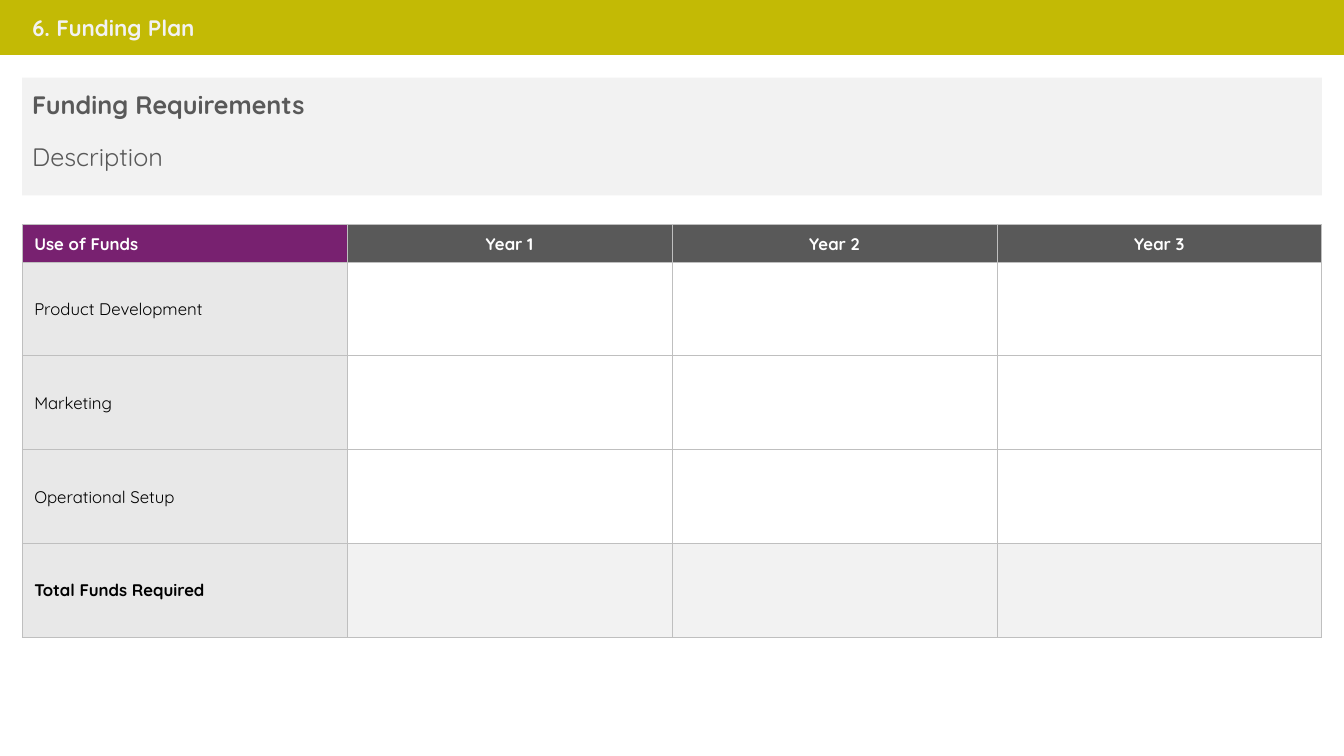
from lxml import etree
from pptx import Presentation
from pptx import util as u
from pptx.dml.color import RGBColor
from pptx.enum import shapes, text
from pptx.oxml import ns

FONT = "Quicksand"
COLORS = {
    "band": "C3BA05", "panel": "F2F2F2", "gray": "595959", "purple": "782170",
    "label": "E8E8E8", "border": "BFBFBF", "white": "FFFFFF", "black": "000000",
}
YEARS = ["Year 1", "Year 2", "Year 3"]
USES = ["Product Development", "Marketing", "Operational Setup", "Total Funds Required"]
MARGIN = 0.22
WIDTH = 12.89


def color(name):
    """Return the named palette colour."""
    return RGBColor.from_string(COLORS[name])


def write(frame, words, size, ink, bold=False, align=text.PP_ALIGN.LEFT):
    """Put one formatted paragraph in a text frame and return it."""
    frame.text = words
    para = frame.paragraphs[0]
    para.alignment = align
    for span in para.runs:
        span.font.name = FONT
        span.font.size = u.Pt(size)
        span.font.bold = bold
        span.font.color.rgb = color(ink)
    return para


def add_panel(page, left, top, width, height, fill):
    """Add a plain filled rectangle without an outline."""
    panel = page.shapes.add_shape(
        shapes.MSO_SHAPE.RECTANGLE, *map(u.Inches, (left, top, width, height)))
    panel.shadow.inherit = False
    panel.fill.solid()
    panel.fill.fore_color.rgb = color(fill)
    panel.line.fill.background()
    return panel


def add_header(page, left, top, width, height):
    """Add the coloured band with the slide title on it."""
    band = add_panel(page, left, top, width, height, "band")
    band.line.color.rgb = color("band")
    band.line.width = u.Pt(1.5)
    title = page.shapes.title
    title.left, title.top = u.Inches(left + MARGIN), u.Inches(top + 0.09)
    title.width, title.height = u.Inches(8.08), u.Inches(0.37)
    title.text_frame.vertical_anchor = text.MSO_ANCHOR.TOP
    title.text_frame.auto_size = text.MSO_AUTO_SIZE.NONE
    write(title.text_frame, "6. Funding Plan", 16, "panel", True)
    band.element.addnext(title.element)


def add_line(page, left, top, width, height, words, bold):
    """Add one line of panel text and return its paragraph."""
    box = page.shapes.add_textbox(*map(u.Inches, (left, top, width, height)))
    box.text_frame.word_wrap = True
    return write(box.text_frame, words, 18, "gray", bold)


def add_requirements(page, left, top, width, height):
    """Add the panel with the heading and the description."""
    add_panel(page, left, top, width, height, "panel")
    add_line(page, left, top + 0.07, 6.95, 0.4, "Funding Requirements", True)
    para = add_line(page, left, top + 0.54, 11.5, 0.43, "Description", False)
    para.line_spacing = 1.15
    para.space_after = u.Pt(8)


def add_borders(cell):
    """Draw a thin border on every side of a table cell."""
    props = cell._tc.get_or_add_tcPr()
    for side in ("a:lnL", "a:lnR", "a:lnT", "a:lnB"):
        line = etree.SubElement(props, ns.qn(side), w=str(u.Pt(0.5)))
        fill = etree.SubElement(line, ns.qn("a:solidFill"))
        etree.SubElement(fill, ns.qn("a:srgbClr"), val=COLORS["border"])


def format_cell(cell, fill, words="", ink="black", bold=False, centered=False):
    """Border, fill and write one table cell."""
    add_borders(cell)
    if fill:
        cell.fill.solid()
        cell.fill.fore_color.rgb = color(fill)
    else:
        cell.fill.background()
    cell.vertical_anchor = text.MSO_ANCHOR.MIDDLE
    cell.margin_left = u.Inches(0.01 if centered else 0.12)
    cell.margin_right = cell.margin_top = u.Inches(0.01)
    cell.margin_bottom = 0
    if words:
        align = text.PP_ALIGN.CENTER if centered else text.PP_ALIGN.LEFT
        write(cell.text_frame, words, 12, ink, bold, align)


def add_funds_table(page, left, top, width, height):
    """Add the table of uses of funds by year."""
    header_height = 0.37
    row_height = (height - header_height) / len(USES)
    table = page.shapes.add_table(
        len(USES) + 1, len(YEARS) + 1,
        *map(u.Inches, (left, top, width, height))).table
    table.first_row = table.horz_banding = False
    for column in table.columns:
        column.width = u.Inches(width / (len(YEARS) + 1))
    table.rows[0].height = u.Inches(header_height)
    format_cell(table.cell(0, 0), "purple", "Use of Funds", "white", True)
    for col, year in enumerate(YEARS, 1):
        format_cell(table.cell(0, col), "gray", year, "white", True, True)
    for row, use in enumerate(USES, 1):
        is_total = row == len(USES)
        table.rows[row].height = u.Inches(row_height)
        format_cell(table.cell(row, 0), "label", use, bold=is_total)
        for col in range(1, len(YEARS) + 1):
            format_cell(table.cell(row, col), "panel" if is_total else None)


def main():
    """Build and save the funding plan slide."""
    deck = Presentation()
    deck.slide_width, deck.slide_height = u.Inches(13.33), u.Inches(7.5)
    page = deck.slides.add_slide(deck.slide_layouts[5])
    add_requirements(page, MARGIN, 0.77, WIDTH, 1.17)
    add_header(page, 0, 0, 13.33, 0.54)
    add_funds_table(page, MARGIN, 2.23, WIDTH, 4.09)
    deck.save("out.pptx")


if __name__ == "__main__":
    main()
